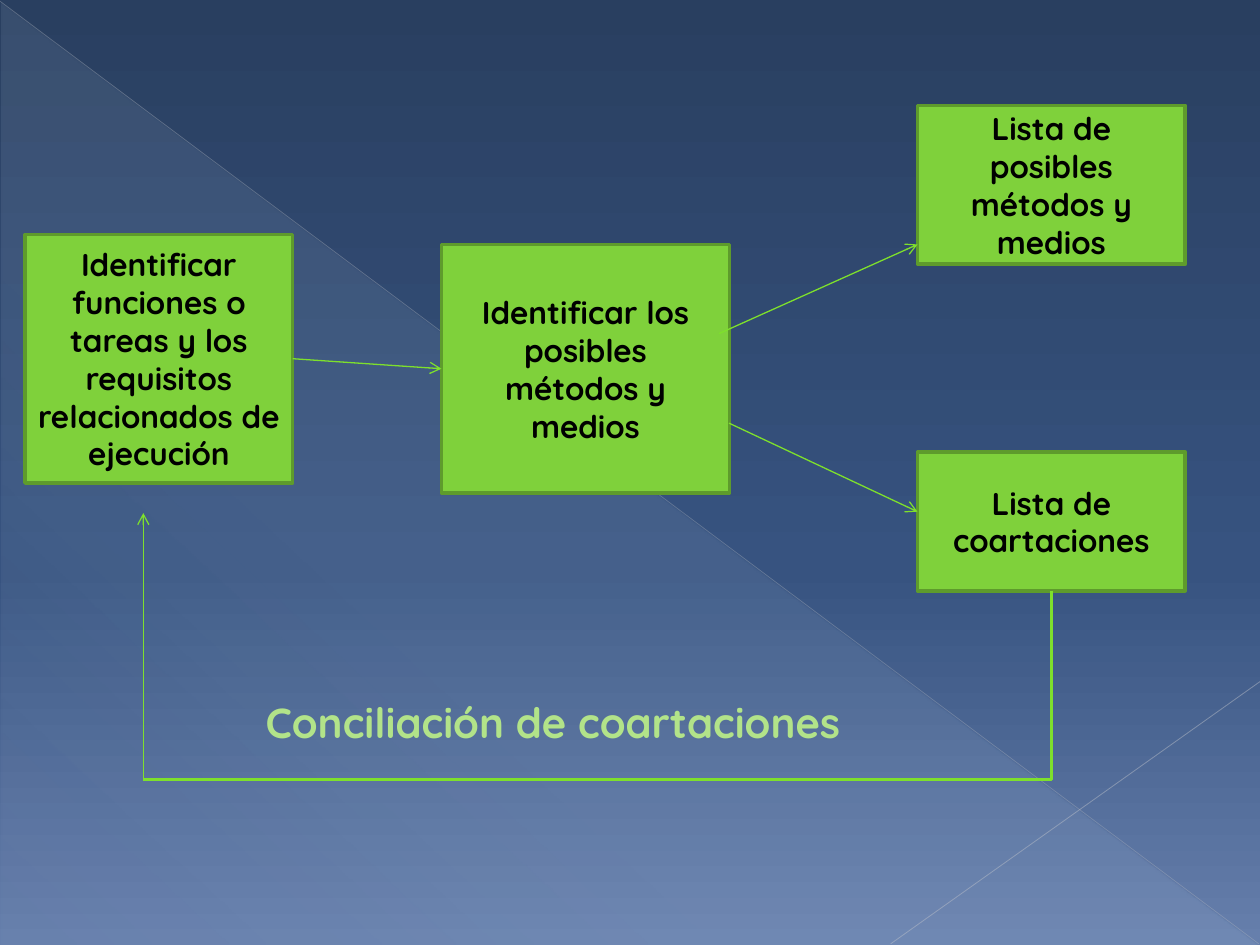
from lxml import etree
from pptx import Presentation
from pptx.dml.color import RGBColor
from pptx.enum.shapes import MSO_CONNECTOR, MSO_SHAPE
from pptx.enum.text import MSO_ANCHOR, PP_ALIGN
from pptx.oxml.ns import qn
from pptx.util import Pt

STRAIGHT, ELBOW = MSO_CONNECTOR.STRAIGHT, MSO_CONNECTOR.ELBOW
PROCESS, TRIANGLE = MSO_SHAPE.FLOWCHART_PROCESS, MSO_SHAPE.RIGHT_TRIANGLE
MIDDLE, CENTER = MSO_ANCHOR.MIDDLE, PP_ALIGN.CENTER
BOTTOM, LEFT, RIGHT = 2, 1, 3
FONT = "Quicksand"
GREEN, EDGE, ARROW, CAPTION = "7FD13B", "5E9B2C", "7EE02C", "B2E389"

SKY = [(0, "293F60", 100), (60, "375380", 100), (100, "667FAC", 100)]
GLOW = [(0, "D6ECFF", 10), (70, "D6ECFF", 8), (100, "D6ECFF", 1)]
RAYS = [
    ((0, 0.7, 719.3, 539.3), "B7BCC5", 0.39, 35),
    ((720, 389.5, 509, 539.3), "BFC3CB", 0.47, 45),
]
BOXES = {
    "tasks": ("Identificar funciones o tareas y los requisitos relacionados de ejecución",
              (14.3, 134, 153, 142)),
    "identify": ("Identificar los posibles métodos y medios", (252.3, 139.7, 164.5, 142)),
    "methods": ("Lista de posibles métodos y medios", (524.3, 60.3, 153, 90.7)),
    "constraints": ("Lista de coartaciones", (524.3, 258.3, 153, 79.3)),
}
BRANCHES = [(416.6, 241.8, 524.3, 292.4), (411, 190.6, 524.3, 139.7)]
RETURN_X, RETURN_Y, RETURN_TOP = 81.9, 445.5, 293.2
TITLE = ("Conciliación de coartaciones", (144.7, 394.6, 425.5, 36))


def rgb(value):
    return RGBColor.from_string(value)


def set_gradient(fill, element, stops, angle):
    fill.gradient()
    grad = element.find(".//" + qn("a:gradFill"))
    for child in list(grad):
        grad.remove(child)
    gs_list = etree.SubElement(grad, qn("a:gsLst"))
    for pos, color, alpha in stops:
        gs = etree.SubElement(gs_list, qn("a:gs"), pos=str(pos * 1000))
        clr = etree.SubElement(gs, qn("a:srgbClr"), val=color)
        etree.SubElement(clr, qn("a:alpha"), val=str(alpha * 1000))
    etree.SubElement(grad, qn("a:lin"), ang=str(angle * 60000), scaled="0")


def add_line(points, color, width, kind=STRAIGHT, alpha=100, arrow=False):
    cxn = slide.shapes.add_connector(kind, *map(Pt, points))
    cxn.line.color.rgb = rgb(color)
    cxn.line.width = Pt(width)
    sp_pr = cxn._element.spPr
    if alpha < 100:
        clr = sp_pr.find(".//" + qn("a:srgbClr"))
        etree.SubElement(clr, qn("a:alpha"), val=str(alpha * 1000))
    if arrow:
        etree.SubElement(sp_pr.find(qn("a:ln")), qn("a:tailEnd"), type="arrow")
    etree.SubElement(sp_pr, qn("a:effectLst"))
    return cxn


def add_run(tf, text, size, color):
    r = tf.paragraphs[0].add_run()
    r.text = text
    r.font.name = FONT
    r.font.size = Pt(size)
    r.font.bold = True
    r.font.color.rgb = rgb(color)


def add_box(text, frame):
    sp = slide.shapes.add_shape(PROCESS, *map(Pt, frame))
    sp.shadow.inherit = False
    sp.fill.solid()
    sp.fill.fore_color.rgb = rgb(GREEN)
    sp.line.color.rgb = rgb(EDGE)
    sp.line.width = Pt(2)
    tf = sp.text_frame
    tf.word_wrap = True
    tf.vertical_anchor = MIDDLE
    tf.paragraphs[0].alignment = CENTER
    add_run(tf, text, 18, "000000")
    return sp


prs = Presentation()
prs.slide_width, prs.slide_height = Pt(720), Pt(540)
slide = prs.slides.add_slide(prs.slide_layouts[6])
set_gradient(slide.background.fill, slide._element, SKY, 90)

glow = slide.shapes.add_shape(TRIANGLE, Pt(0.7), Pt(1.4), Pt(718.6), Pt(538.6))
glow.shadow.inherit = False
glow.line.fill.background()
set_gradient(glow.fill, glow._element, GLOW, 133)
for points, color, width, alpha in RAYS:
    add_line(points, color, width, alpha=alpha)

boxes = {name: add_box(text, frame) for name, (text, frame) in BOXES.items()}

step = add_line((167.3, 205, 252.3, 210.7), ARROW, 0.75, arrow=True)
step.begin_connect(boxes["tasks"], RIGHT)
step.end_connect(boxes["identify"], LEFT)
for points in BRANCHES:
    add_line(points, ARROW, 0.75, arrow=True)

x, y, w, h = BOXES["constraints"][1]
start_x, start_y = x + w / 2, y + h
drop, span = RETURN_Y - start_y, start_x - RETURN_X
elbow = add_line((start_x, start_y, start_x + drop, start_y + span), ARROW, 1.5, ELBOW)
elbow.begin_connect(boxes["constraints"], BOTTOM)
elbow.left = Pt((start_x + RETURN_X - drop) / 2)
elbow.top = Pt((start_y + RETURN_Y - span) / 2)
elbow.width, elbow.height = Pt(drop), Pt(span)
elbow_pr = elbow._element.spPr
elbow_pr.find(qn("a:xfrm")).set("rot", str(90 * 60000))
elbow_pr.find(qn("a:prstGeom")).set("prst", "bentConnector2")
add_line((RETURN_X, RETURN_Y, RETURN_X, RETURN_TOP), ARROW, 0.75, arrow=True)

text, frame = TITLE
caption = slide.shapes.add_textbox(*map(Pt, frame))
caption.text_frame.word_wrap = True
add_run(caption.text_frame, text, 24, CAPTION)

prs.save("out.pptx")
